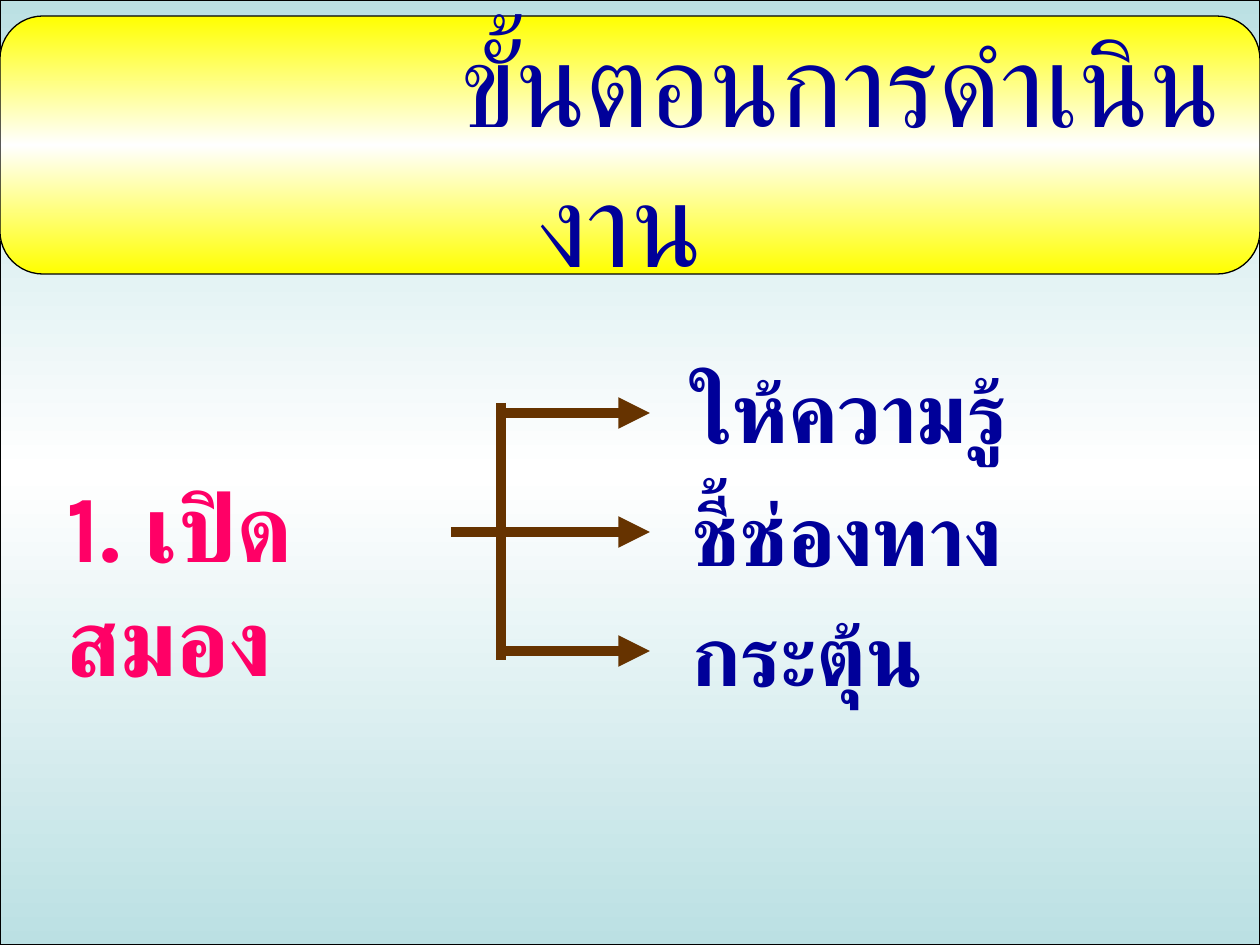
from copy import deepcopy

from pptx import Presentation
from pptx.dml.color import RGBColor as RGB
from pptx.enum.shapes import MSO_CONNECTOR as LINK, MSO_SHAPE as SHAPE
from pptx.enum.text import MSO_ANCHOR as ANCHOR, PP_ALIGN as ALIGN
from pptx.oxml.ns import qn
from pptx.util import Pt
from lxml.etree import SubElement as sub

# Content
TITLE = "ขั้นตอนการดำเนินงาน"
TOPIC = "1. เปิดสมอง"
STEPS = [("ให้ความรู้", 353), ("ชี้ช่องทาง", 476), ("กระตุ้น", 596)]  # text, top

THEME = {
    "sky": "BBE0E3", "sun": "FFFF00", "white": "FFFFFF", "edge": "000000",
    "navy": "000099", "pink": "FF0066", "brown": "663300",
    "head": ("Roboto", 67, False),
    "topic": ("Karla", 54, True),
    "step": ("Karla", 48, True),
    "thin": 0.75, "thick": 6,
}

# Layout in px
PX = 7257.6  # EMU per px, at 126 px to the inch
WIDE, HIGH = 1260, 945
STEM, TIP = 501, 650
ROW, GAP = 532, 119


def emu(n):
    return round(n * PX)


def tint(name):
    return RGB.from_string(THEME[name])


def panel(kind, box, hue):
    """Outlined shape that fades from hue to white and back."""
    shape = slide.shapes.add_shape(kind, *map(emu, box))
    shape.shadow.inherit = False
    shape.line.color.rgb = tint("edge")
    shape.line.width = Pt(THEME["thin"])
    shape.fill.gradient()
    shape.fill.gradient_angle = 90
    first, last = shape.fill.gradient_stops
    first.position, last.position = 0, 1
    first.color.rgb = last.color.rgb = tint(hue)
    stops = shape.fill._fill._gradFill.find(qn("a:gsLst"))
    stops.insert(1, deepcopy(stops[0]))
    mid = shape.fill.gradient_stops[1]
    mid.position = 0.5
    mid.color.rgb = tint("white")
    return shape


def label(text, box, style, hue):
    frame = slide.shapes.add_textbox(*map(emu, box)).text_frame
    frame.word_wrap = True
    para = frame.paragraphs[0]
    para.text = text
    font = para.font
    font.name, size, font.bold = THEME[style]
    font.size = Pt(size)
    font.color.rgb = tint(hue)
    return frame


def line(x1, y1, x2, y2, arrow=False):
    link = slide.shapes.add_connector(LINK.STRAIGHT, *map(emu, (x1, y1, x2, y2)))
    link.line.color.rgb = tint("brown")
    link.line.width = Pt(THEME["thick"])
    if arrow:
        sub(link.line._get_or_add_ln(), qn("a:tailEnd"), type="triangle")
    sub(link._element.spPr, qn("a:effectLst"))


deck = Presentation()
deck.slide_width, deck.slide_height = emu(WIDE), emu(HIGH)
slide = deck.slides.add_slide(deck.slide_layouts[6])

# Backdrop and banner
panel(SHAPE.RECTANGLE, (0, 0, WIDE, HIGH), "sky")
panel(SHAPE.ROUNDED_RECTANGLE, (0, 16, WIDE, 258), "sun")

# Title: centred, with the first line pushed right
head = label(TITLE, (0, 66, 1240, 169), "head", "navy")
head.vertical_anchor = ANCHOR.MIDDLE
head.margin_left = head.margin_right = 0
para = head.paragraphs[0]
para.alignment = ALIGN.CENTER
para._p.get_or_add_pPr().set("indent", str(emu(440)))

# Topic and its branches
label(TOPIC, (54, 462, 427, 126), "topic", "pink")
line(451, ROW, STEM, ROW)
line(STEM, 403, STEM, 660)
for i, (text, top) in enumerate(STEPS):
    y = ROW + (i - 1) * GAP
    line(STEM, y, TIP, y, arrow=True)
    label(text, (679, top, 536, 113), "step", "navy")

deck.save("out.pptx")
